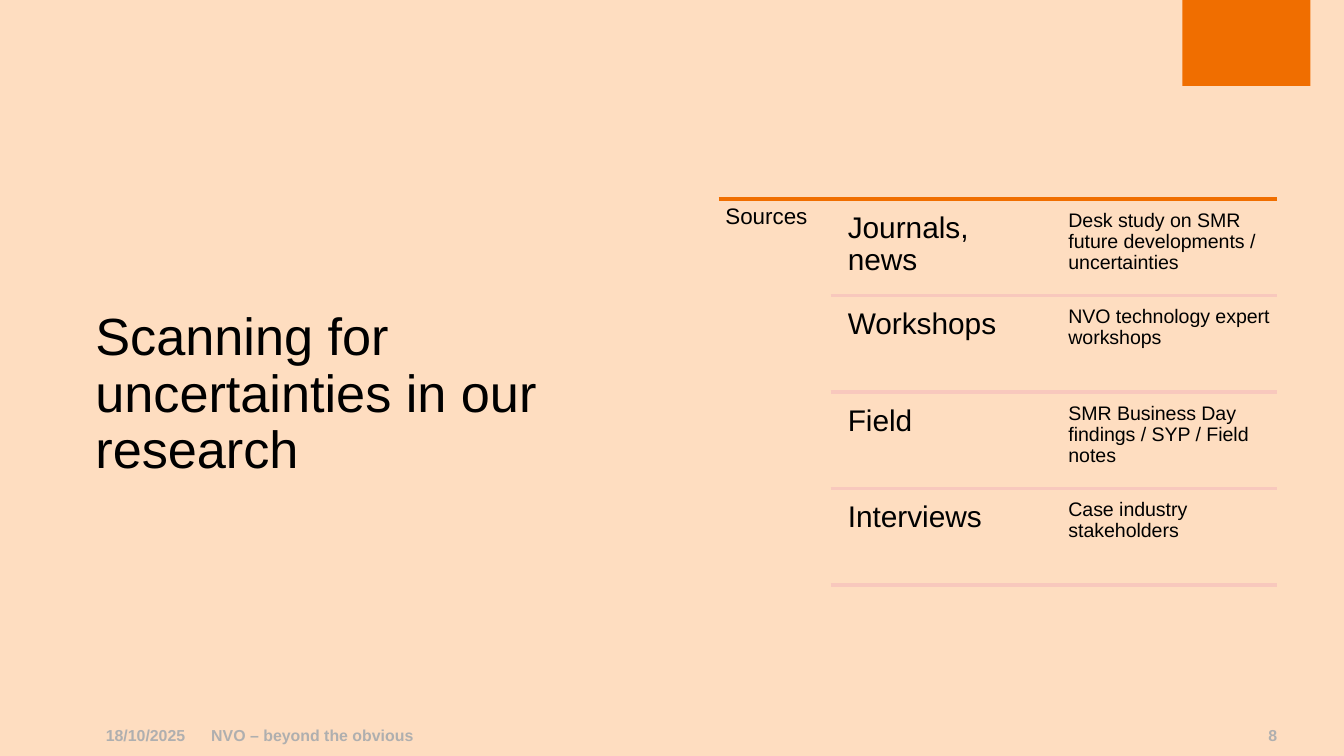
"""Build the slide on the sources used to scan for uncertainties."""
from dataclasses import dataclass

from lxml.etree import SubElement
from pptx import Presentation
from pptx.dml.color import RGBColor as Color
from pptx.enum.shapes import MSO_CONNECTOR as Connector, MSO_SHAPE as Preset
from pptx.enum.text import MSO_ANCHOR as Anchor, PP_ALIGN as Align
from pptx.oxml.ns import qn
from pptx.slide import Slide
from pptx.text.text import TextFrame
from pptx.util import Pt


@dataclass(frozen=True)
class Style:
    size: float
    color: Color
    bold: bool = False
    spacing: float = 1.0
    inset: float = 0


@dataclass(frozen=True)
class Theme:
    font: str = "Arial"
    paper: Color = Color(0xFE, 0xDD, 0xC0)
    accent: Color = Color(0xF0, 0x6E, 0x00)
    divider: Color = Color(0xF8, 0xC8, 0xBD)
    rule_width: float = 2
    title: Style = Style(28, Color(0, 0, 0), spacing=0.9)
    label: Style = Style(12, Color(0, 0, 0), spacing=0.9, inset=3.6)
    source: Style = Style(16, Color(0, 0, 0), spacing=0.9, inset=4.8)
    detail: Style = Style(10.5, Color(0, 0, 0), spacing=0.9, inset=3.6)
    footer: Style = Style(8.5, Color(0xAF, 0xAF, 0xAF), bold=True)


@dataclass(frozen=True)
class Area:
    left: float
    top: float
    width: float
    height: float

    def lengths(self) -> tuple[Pt, Pt, Pt, Pt]:
        """Return left, top, width and height as lengths."""
        return Pt(self.left), Pt(self.top), Pt(self.width), Pt(self.height)


@dataclass(frozen=True)
class Source:
    name: str
    detail: str


@dataclass(frozen=True)
class FooterItem:
    text: str
    left: float
    width: float
    align: Align = Align.LEFT


THEME = Theme()
SOURCES = (
    Source("Journals, news", "Desk study on SMR future developments / uncertainties"),
    Source("Workshops", "NVO technology expert workshops"),
    Source("Field", "SMR Business Day findings / SYP / Field notes"),
    Source("Interviews", "Case industry stakeholders"),
)
FOOTER = (
    FooterItem("18/10/2025", 56.7, 56.7),
    FooterItem("NVO – beyond the obvious", 113.2, 160),
    FooterItem("8", 643.7, 76.3, Align.CENTER),
)
LIST_LEFT, LIST_RIGHT, LIST_TOP = 385, 684, 106.6
NAME_LEFT, DETAIL_LEFT, COLUMN_WIDTH = 449.4, 568.8, 115.2
DIVIDER_LEFT, ROW_STEP, ROW_GAP, ROW_HEIGHT = 445, 51.7, 2.5, 49


def write(frame: TextFrame, text: str, style: Style, align: Align = Align.LEFT,
          anchor: Anchor = Anchor.TOP) -> None:
    """Fill a text frame with one styled paragraph."""
    frame.word_wrap = True
    frame.vertical_anchor = anchor
    frame.margin_left = frame.margin_right = Pt(style.inset)
    frame.margin_top = frame.margin_bottom = Pt(style.inset)
    para = frame.paragraphs[0]
    para.text, para.alignment, para.line_spacing = text, align, style.spacing
    para.font.name, para.font.size = THEME.font, Pt(style.size)
    para.font.bold, para.font.color.rgb = style.bold, style.color


def add_text(page: Slide, area: Area, text: str, style: Style,
             align: Align = Align.LEFT) -> None:
    """Add a text box."""
    box = page.shapes.add_textbox(*area.lengths())
    write(box.text_frame, text, style, align)


def add_rule(page: Slide, left: float, top: float, color: Color) -> None:
    """Add a horizontal rule that runs to the right edge of the list."""
    rule = page.shapes.add_connector(
        Connector.STRAIGHT, Pt(left), Pt(top), Pt(LIST_RIGHT), Pt(top))
    rule.line.color.rgb, rule.line.width = color, Pt(THEME.rule_width)
    SubElement(rule._element.spPr, qn("a:effectLst"))


def add_badge(page: Slide, area: Area) -> None:
    """Add the plain corner badge."""
    badge = page.shapes.add_shape(Preset.RECTANGLE, *area.lengths())
    badge.shadow.inherit = False
    badge.fill.solid()
    badge.fill.fore_color.rgb = THEME.accent
    badge.line.fill.background()


def add_title(page: Slide, area: Area, text: str) -> None:
    """Place and format the title placeholder."""
    title = page.shapes.title
    title.left, title.top, title.width, title.height = area.lengths()
    write(title.text_frame, text, THEME.title, anchor=Anchor.MIDDLE)


def add_source(page: Slide, index: int, source: Source) -> None:
    """Add one row of the list with the divider below it."""
    top = LIST_TOP + index * ROW_STEP
    for left, text, style in ((NAME_LEFT, source.name, THEME.source),
                              (DETAIL_LEFT, source.detail, THEME.detail)):
        area = Area(left, top + ROW_GAP, COLUMN_WIDTH, ROW_HEIGHT)
        add_text(page, area, text, style)
    add_rule(page, DIVIDER_LEFT, top + ROW_STEP, THEME.divider)


def main() -> None:
    """Build and save the deck."""
    deck = Presentation()
    deck.slide_width, deck.slide_height = Pt(720), Pt(405)
    page = deck.slides.add_slide(deck.slide_layouts[5])
    page.background.fill.solid()
    page.background.fill.fore_color.rgb = THEME.paper

    add_badge(page, Area(633.4, 0, 68.6, 46.1))
    add_title(page, Area(51.1, 105.1, 285.8, 213.1),
              "Scanning for uncertainties in our research")
    add_rule(page, LIST_LEFT, LIST_TOP, THEME.accent)
    add_text(page, Area(LIST_LEFT, LIST_TOP, DIVIDER_LEFT - LIST_LEFT, 209.5),
             "Sources", THEME.label)
    for index, source in enumerate(SOURCES):
        add_source(page, index, source)
    for item in FOOTER:
        add_text(page, Area(item.left, 388.8, item.width, 16.2),
                 item.text, THEME.footer, item.align)
    deck.save("out.pptx")


if __name__ == "__main__":
    main()
